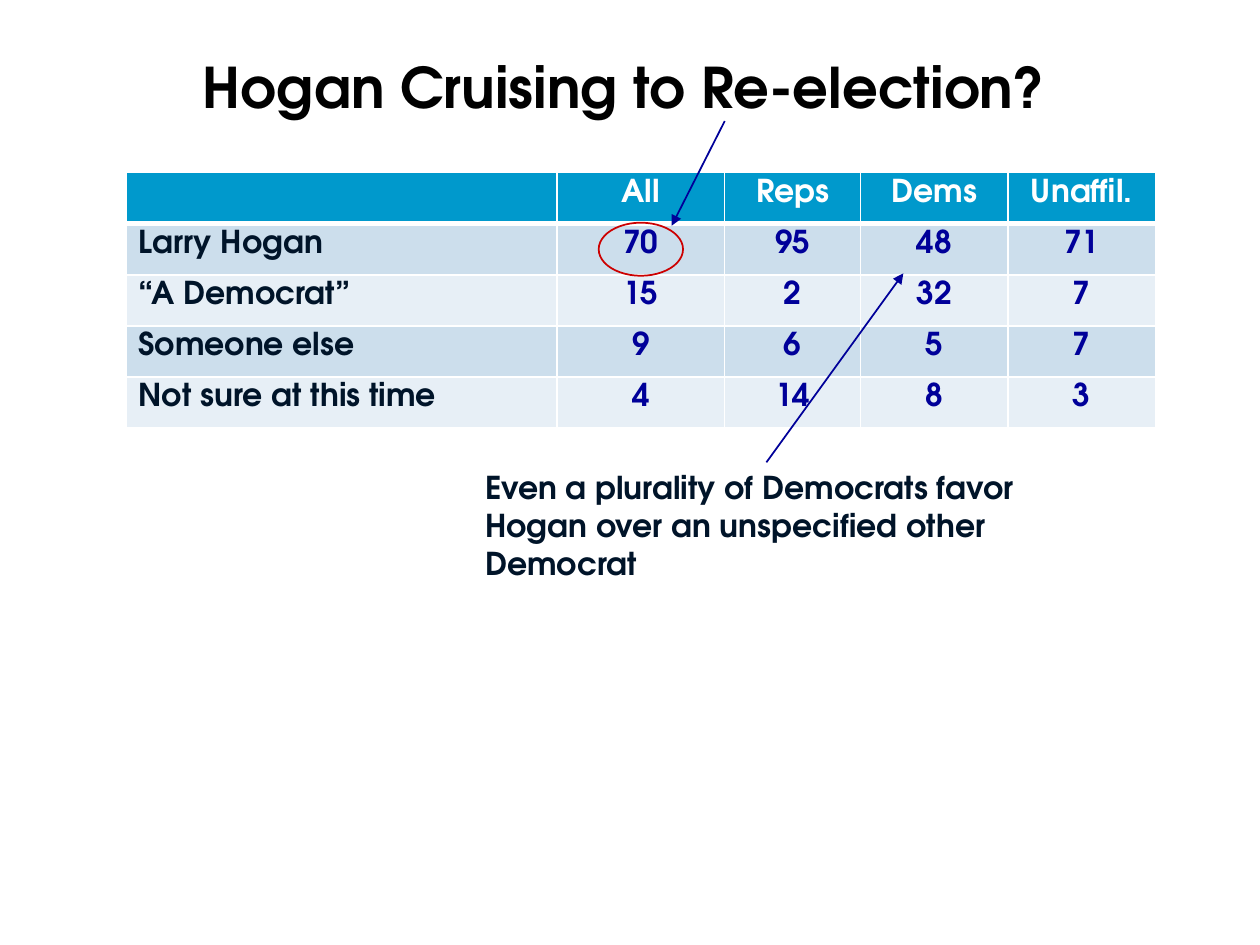
import dataclasses
import pptx
import pptx.dml.color
import pptx.enum.shapes
import pptx.enum.text
import pptx.oxml
import pptx.oxml.ns
import pptx.util

Cm = pptx.util.Cm
Pt = pptx.util.Pt
ALIGN = pptx.enum.text.PP_ALIGN
ANCHOR = pptx.enum.text.MSO_ANCHOR


@dataclasses.dataclass(frozen=True)
class Theme:
    font: str = "TeX Gyre Adventor"
    title_size: int = 32
    body_size: int = 18
    white: str = "FFFFFF"
    black: str = "000000"
    ink: str = "001429"
    blue: str = "000099"
    red: str = "CC0000"
    header: str = "0099CC"
    bands: tuple = ("CCDEEC", "E7EFF6")
    thin: int = 1
    thick: int = 3


@dataclasses.dataclass(frozen=True)
class Box:
    left: float
    top: float
    width: float
    height: float

    def lengths(self):
        return [Cm(value) for value in dataclasses.astuple(self)]


THEME = Theme()
HEADINGS = ["", "All", "Reps", "Dems", "Unaffil."]
RESULTS = [
    ["Larry Hogan", 70, 95, 48, 71],
    ["“A Democrat”", 15, 2, 32, 7],
    ["Someone else", 9, 6, 5, 7],
    ["Not sure at this time", 4, 14, 8, 3],
]
COLUMN_WIDTHS = [8.69, 3.38, 2.74, 2.97, 2.97]
ROW_HEIGHT = 1.03


def rgb(color):
    return pptx.dml.color.RGBColor.from_string(color)


def set_values(target, values):
    for name, value in values.items():
        setattr(target, name, value)


def write(frame, text, size, color, align):
    para = frame.paragraphs[0]
    para.alignment = align
    span = para.add_run()
    span.text = text
    set_values(span.font, {"name": THEME.font, "size": Pt(size), "bold": True})
    span.font.color.rgb = rgb(color)


def add_text(page, area, text, size, color, align, anchor):
    box = page.shapes.add_textbox(*area.lengths())
    set_values(box.text_frame, {"word_wrap": True, "vertical_anchor": anchor})
    write(box.text_frame, text, size, color, align)


def add_borders(cell, widths):
    properties = cell._tc.get_or_add_tcPr()
    for index, (side, width) in enumerate(widths.items()):
        border = pptx.oxml.parse_xml(
            f'<a:ln{side} {pptx.oxml.ns.nsdecls("a")} w="{Pt(width)}"><a:solidFill>'
            f'<a:srgbClr val="{THEME.white}"/></a:solidFill></a:ln{side}>'
        )
        properties.insert(index, border)


def add_results_table(page, area):
    rows = [HEADINGS, *RESULTS]
    frame = page.shapes.add_table(len(rows), len(HEADINGS), *area.lengths())
    table = frame.table
    for column, width in zip(table.columns, COLUMN_WIDTHS):
        column.width = Cm(width)
    for row_index, values in enumerate(rows):
        table.rows[row_index].height = Cm(ROW_HEIGHT)
        is_header = row_index == 0
        fill = THEME.header if is_header else THEME.bands[(row_index - 1) % 2]
        borders = {
            "L": THEME.thin,
            "R": THEME.thin,
            "T": THEME.thick if row_index == 1 else THEME.thin,
            "B": THEME.thick if is_header else THEME.thin,
        }
        for column_index, value in enumerate(values):
            cell = table.cell(row_index, column_index)
            is_label = column_index == 0
            cell.fill.solid()
            cell.fill.fore_color.rgb = rgb(fill)
            add_borders(cell, borders)
            color = THEME.white if is_header else THEME.ink if is_label else THEME.blue
            align = ALIGN.LEFT if is_label else ALIGN.CENTER
            write(cell.text_frame, str(value), THEME.body_size, color, align)


def circle_result(page, area, row, column):
    width, height = 1.7, 1.07
    center = area.left + sum(COLUMN_WIDTHS[:column]) + COLUMN_WIDTHS[column] / 2
    middle = area.top + (row + 0.5) * ROW_HEIGHT
    ring = Box(center - width / 2, middle - height / 2, width, height)
    shape = page.shapes.add_shape(
        pptx.enum.shapes.MSO_SHAPE.OVAL, *ring.lengths()
    )
    shape.shadow.inherit = False
    shape.fill.background()
    shape.line.color.rgb = rgb(THEME.red)
    shape.line.width = Pt(THEME.thin)


def add_arrow(page, start, end):
    points = [Cm(value) for value in (*start, *end)]
    arrow = page.shapes.add_connector(
        pptx.enum.shapes.MSO_CONNECTOR.STRAIGHT, *points
    )
    arrow.line.color.rgb = rgb(THEME.blue)
    arrow.line.width = Pt(THEME.thin)
    namespace = pptx.oxml.ns.nsdecls("a")
    arrow.line._get_or_add_ln().append(
        pptx.oxml.parse_xml(f'<a:tailEnd {namespace} type="triangle"/>')
    )
    arrow._element.spPr.append(pptx.oxml.parse_xml(f"<a:effectLst {namespace}/>"))


def add_callouts(page, table_area, note_area):
    circle_result(page, table_area, row=1, column=1)
    add_text(
        page, note_area,
        "Even a plurality of Democrats favor Hogan over an unspecified other Democrat",
        THEME.body_size, THEME.ink, ALIGN.LEFT, ANCHOR.TOP,
    )
    left, top = table_area.left, table_area.top
    add_arrow(
        page, (note_area.left + 5.92, note_area.top), (left + 15.67, top + 2.03)
    )
    add_arrow(page, (left + 12.07, top - 1.04), (left + 11, top + 1.07))


def main():
    deck = pptx.Presentation()
    set_values(deck, {"slide_width": Cm(25.4), "slide_height": Cm(19.05)})
    page = deck.slides.add_slide(deck.slide_layouts[6])
    table_area = Box(2.54, 3.48, sum(COLUMN_WIDTHS), ROW_HEIGHT * (len(RESULTS) + 1))
    add_text(
        page, Box(1.47, 1.07, 22.23, 1.47), "Hogan Cruising to Re-election?",
        THEME.title_size, THEME.black, ALIGN.CENTER, ANCHOR.BOTTOM,
    )
    add_results_table(page, table_area)
    add_callouts(page, table_area, Box(9.53, 9.32, 11.22, 2.57))
    deck.save("out.pptx")


if __name__ == "__main__":
    main()
